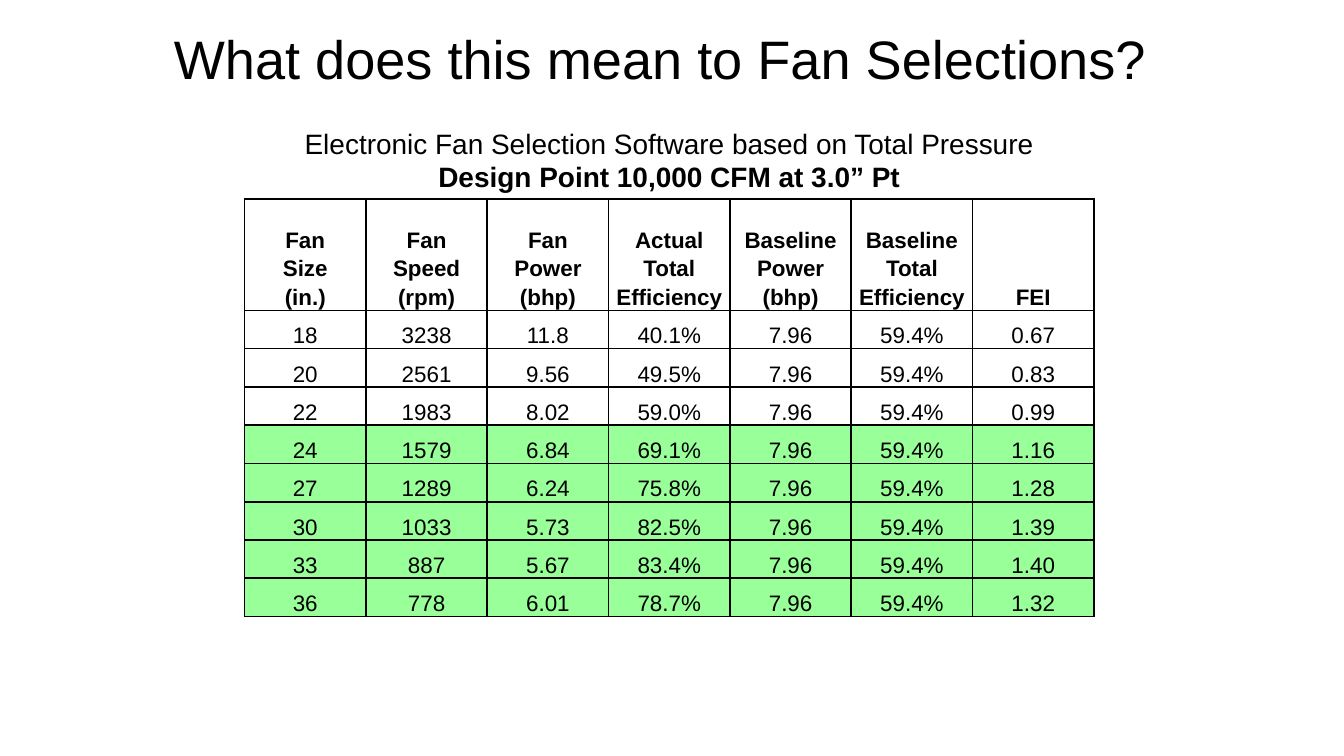
from dataclasses import dataclass

from lxml.etree import SubElement
from pptx import Presentation
from pptx.dml.color import RGBColor as RGB
from pptx.enum.text import MSO_ANCHOR as Anchor, PP_ALIGN as Align
from pptx.oxml.ns import qn
from pptx.util import Inches, Pt


@dataclass(frozen=True)
class Theme:
    font: str = "Arial"
    ink: str = "000000"
    pass_fill: str = "99FF99"
    title: int = 29
    caption: int = 15
    body: int = 12
    border: int = 1


THEME = Theme()
WIDTH = 10
LEFT, SPAN = 1.82, 6.32
BASE_POWER, BASE_EFF = "7.96", "59.4%"
HEADS = [
    "Fan\vSize\v(in.)", "Fan\vSpeed\v(rpm)", "Fan\vPower\v(bhp)",
    "Actual\vTotal\vEfficiency", "Baseline\vPower\v(bhp)",
    "Baseline Total Efficiency", "FEI",
]
# size, speed, power, actual efficiency, FEI
FANS = [
    ("18", "3238", "11.8", "40.1%", "0.67"),
    ("20", "2561", "9.56", "49.5%", "0.83"),
    ("22", "1983", "8.02", "59.0%", "0.99"),
    ("24", "1579", "6.84", "69.1%", "1.16"),
    ("27", "1289", "6.24", "75.8%", "1.28"),
    ("30", "1033", "5.73", "82.5%", "1.39"),
    ("33", "887", "5.67", "83.4%", "1.40"),
    ("36", "778", "6.01", "78.7%", "1.32"),
]


def style(para, size, bold=False):
    para.alignment = Align.CENTER
    font = para.font
    font.name, font.size, font.bold = THEME.font, Pt(size), bold
    font.color.rgb = RGB.from_string(THEME.ink)


def add_text(slide, box, lines, size):
    """Add centred lines, each given as (text, bold)."""
    frame = slide.shapes.add_textbox(*map(Inches, box)).text_frame
    frame.word_wrap = True
    frame.vertical_anchor = Anchor.MIDDLE
    frame.margin_left = frame.margin_right = Inches(0.07)
    frame.margin_top = frame.margin_bottom = Inches(0.04)
    frame.text = "\n".join(text for text, _ in lines)
    for para, (_, bold) in zip(frame.paragraphs, lines):
        style(para, size, bold)


def add_border(cell):
    props = cell._tc.get_or_add_tcPr()
    for side in ("lnL", "lnR", "lnT", "lnB"):
        line = SubElement(props, qn(f"a:{side}"), w=str(Pt(THEME.border)))
        fill = SubElement(line, qn("a:solidFill"))
        SubElement(fill, qn("a:srgbClr"), val=THEME.ink)


def fill_cell(cell, text, head, passed):
    cell.text = text
    cell.vertical_anchor = Anchor.BOTTOM
    cell.margin_left = cell.margin_right = Inches(0.05)
    cell.margin_top = cell.margin_bottom = 0
    para = cell.text_frame.paragraphs[0]
    para.line_spacing = 1.15
    style(para, THEME.body, head)
    add_border(cell)
    if passed:
        cell.fill.solid()
        cell.fill.fore_color.rgb = RGB.from_string(THEME.pass_fill)
    else:
        cell.fill.background()


def add_fans(slide, box):
    """Add the fan table; rows with an FEI of at least 1 are filled."""
    rows = [HEADS] + [(*fan[:4], BASE_POWER, BASE_EFF, fan[4]) for fan in FANS]
    table = slide.shapes.add_table(
        len(rows), len(HEADS), *map(Inches, box)).table
    table.first_row = table.horz_banding = False
    for col in table.columns:
        col.width = Inches(box[2] / len(HEADS))
    head_height = 0.83
    row_height = (box[3] - head_height) / len(FANS)
    for i, texts in enumerate(rows):
        head = i == 0
        table.rows[i].height = Inches(head_height if head else row_height)
        passed = not head and float(texts[-1]) >= 1
        for cell, text in zip(table.rows[i].cells, texts):
            fill_cell(cell, text, head, passed)


def main():
    deck = Presentation()
    deck.slide_width, deck.slide_height = Inches(WIDTH), Inches(WIDTH * 9 / 16)
    slide = deck.slides.add_slide(deck.slide_layouts[6])
    add_text(slide, (0.83, -0.04, 8.17, 0.94),
             [("What does this mean to Fan Selections?", False)], THEME.title)
    add_fans(slide, (LEFT, 1.48, SPAN, 3.11))
    add_text(slide, (LEFT, 0.9, SPAN, 0.58),
             [("Electronic Fan Selection Software based on Total Pressure", False),
              ("Design Point 10,000 CFM at 3.0” Pt", True)], THEME.caption)
    deck.save("out.pptx")


if __name__ == "__main__":
    main()
